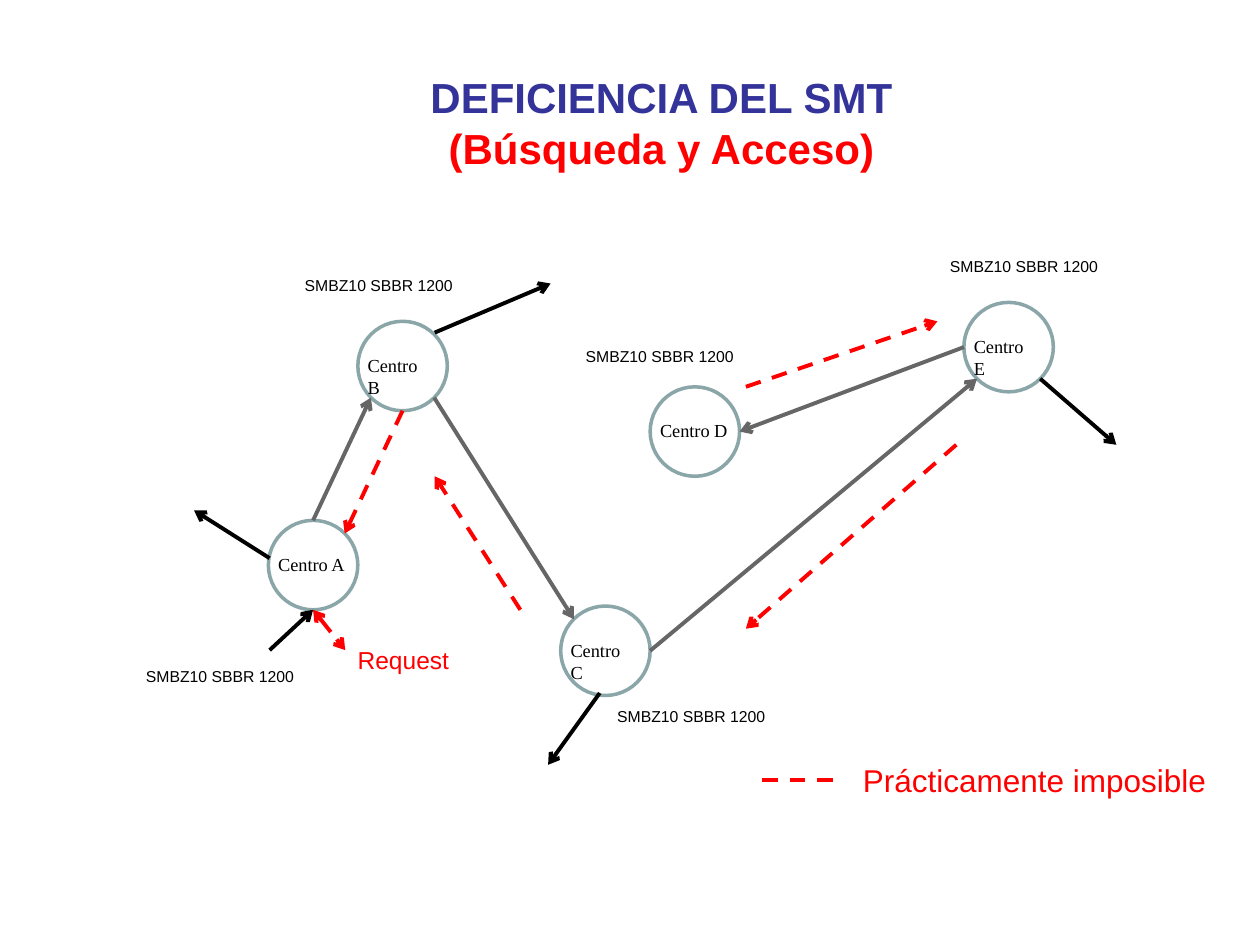
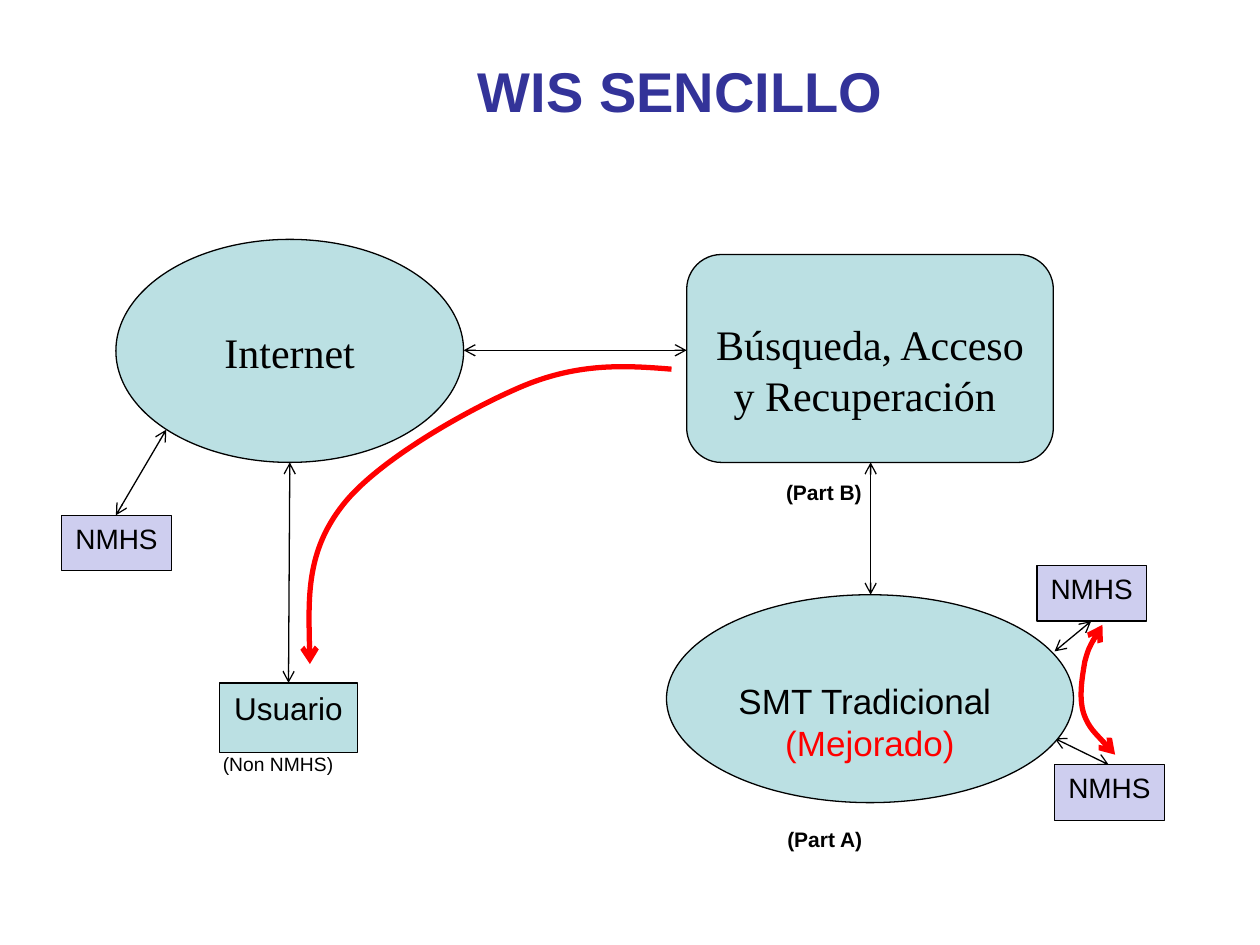
from dataclasses import dataclass
from math import sqrt

from lxml.etree import SubElement
from pptx import Presentation
from pptx.dml.color import RGBColor
from pptx.enum.dml import MSO_LINE
from pptx.enum.shapes import MSO_CONNECTOR, MSO_SHAPE
from pptx.enum.text import MSO_ANCHOR, PP_ALIGN
from pptx.oxml.ns import qn
from pptx.util import Inches, Pt


@dataclass(frozen=True)
class Theme:
    sans: str = "Arial"
    serif: str = "Times New Roman"
    title: str = "333399"
    accent: str = "FF0000"
    ink: str = "000000"
    ring: str = "8AA6A8"
    link: str = "666666"
    system: str = "BBE0E3"
    service: str = "CECEEF"
    title_size: float = 32
    subtitle_size: float = 24
    body_size: float = 20
    legend_size: float = 18
    box_size: float = 16
    request_size: float = 14
    part_size: float = 12
    note_size: float = 11
    centre_size: float = 10.5
    message_size: float = 9
    hairline: float = 0.75
    arrow_line: float = 2.25
    route_line: float = 3


THEME = Theme()

# The slide is a grid of 100 columns by 75 rows
COLUMNS, ROWS = 100, 75
CELL = Inches(10) / COLUMNS

CIRCLE = 7.1
CENTRES = {"A": (21.3, 41.3), "B": (28.4, 25.5), "C": (44.5, 48.1),
           "D": (51.6, 30.7), "E": (76.5, 24)}
WRAPPED_CENTRES = "BCE"
SIDES = {"top": (0, -1), "bottom": (0, 1), "left": (-1, 0), "right": (1, 0)}


def cells(count):
    return round(count * CELL)


def color(value):
    return RGBColor.from_string(value)


def site(name, *sides):
    """Point on the rim of a centre's circle, on one side or between two."""
    left, top = CENTRES[name]
    radius = CIRCLE / 2
    reach = radius / sqrt(len(sides))
    return (left + radius + reach * sum(SIDES[side][0] for side in sides),
            top + radius + reach * sum(SIDES[side][1] for side in sides))


def write(text_frame, lines, size, font, colors, bold=False, aligns=(PP_ALIGN.CENTER,)):
    """Fill a frame; the last colour and alignment serve all further lines."""
    text_frame.text = "\n".join(lines)
    for index, paragraph in enumerate(text_frame.paragraphs):
        paragraph.alignment = aligns[min(index, len(aligns) - 1)]
        for run in paragraph.runs:
            run.font.size = Pt(size)
            run.font.name = font
            run.font.bold = bold
            run.font.color.rgb = color(colors[min(index, len(colors) - 1)])


def add_text(slide, area, lines, size, shade=THEME.ink, font=THEME.sans,
             wrap=False, align=PP_ALIGN.LEFT, bold=False):
    box = slide.shapes.add_textbox(*map(cells, area))
    box.text_frame.word_wrap = wrap
    colors = (shade,) if isinstance(shade, str) else shade
    write(box.text_frame, lines, size, font, colors, bold, (align,))


def add_title(slide, area, lines, size):
    add_text(slide, area, lines, size, (THEME.title, THEME.accent),
             align=PP_ALIGN.CENTER, bold=True)


def add_node(slide, kind, area, fill, line=THEME.ink, width=THEME.hairline):
    node = slide.shapes.add_shape(kind, *map(cells, area))
    node.shadow.inherit = False
    if fill:
        node.fill.solid()
        node.fill.fore_color.rgb = color(fill)
    else:
        node.fill.background()
    node.line.color.rgb = color(line)
    node.line.width = Pt(width)
    return node


def add_labelled_node(slide, kind, area, fill, lines, size, font=THEME.sans,
                      colors=(THEME.ink,), aligns=(PP_ALIGN.CENTER,), drop=0.5):
    node = add_node(slide, kind, area, fill)
    node.text_frame.word_wrap = True
    node.text_frame.vertical_anchor = MSO_ANCHOR.TOP
    node.text_frame.margin_top = cells(drop)
    write(node.text_frame, lines, size, font, colors, aligns=aligns)


def add_arrowheads(shape, ends):
    line = shape.line._get_or_add_ln()
    for end in ends:
        SubElement(line, qn(f"a:{end}End"), type="arrow")


def add_arrow(slide, start, finish, shade=THEME.ink, width=THEME.arrow_line,
              dashed=False, ends=("tail",)):
    connector = slide.shapes.add_connector(
        MSO_CONNECTOR.STRAIGHT, *map(cells, (*start, *finish)))
    connector.line.color.rgb = color(shade)
    connector.line.width = Pt(width)
    if dashed:
        connector.line.dash_style = MSO_LINE.DASH
    add_arrowheads(connector, ends)
    SubElement(connector._element.spPr, qn("a:effectLst"))


def add_route(slide, points, ends):
    """Curved line: a start, then three Bézier points for each stretch."""
    start, *rest = [(cells(x), cells(y)) for x, y in points]
    builder = slide.shapes.build_freeform(*start)
    builder.add_line_segments(rest, close=False)
    route = builder.convert_to_shape()
    outline = route._element.spPr.find(".//" + qn("a:path"))
    steps = outline.findall(qn("a:lnTo"))
    for first in range(0, len(steps), 3):
        curve = SubElement(outline, qn("a:cubicBezTo"))
        for step in steps[first:first + 3]:
            curve.append(step[0])
            outline.remove(step)
    route.shadow.inherit = False
    route.fill.background()
    route.line.color.rgb = color(THEME.accent)
    route.line.width = Pt(THEME.route_line)
    add_arrowheads(route, ends)


def build_deficiency(slide):
    # Centres
    for name, (left, top) in CENTRES.items():
        add_node(slide, MSO_SHAPE.OVAL, (left, top, CIRCLE, CIRCLE), None,
                 THEME.ring, 2)

    # Links between centres
    for start, finish in (
            (site("A", "top"), site("B", "bottom", "left")),
            (site("B", "bottom", "right"), site("C", "top", "left")),
            (site("C", "right"), site("E", "bottom", "left")),
            (site("E", "left"), site("D", "right"))):
        add_arrow(slide, start, finish, THEME.link)

    # Centre names
    for name, (left, top) in CENTRES.items():
        width = 7.1 if name in WRAPPED_CENTRES else 8
        add_text(slide, (left - 0.2, top + 2.1, width, 2.8), [f"Centro {name}"],
                 THEME.centre_size, font=THEME.serif, wrap=True)

    # Traffic in and out
    for start, finish in (
            ((21.4, 51.6), site("A", "bottom")),
            ((34.5, 26.4), (43.7, 22.5)),
            ((47.6, 55), (43.5, 60.7)),
            ((21.4, 44.3), (15.4, 40.5)),
            (site("E", "bottom", "right"), (88.6, 35.3))):
        add_arrow(slide, start, finish)

    # Message headings
    for left, top in ((10.6, 52.4), (48, 55.6), (23.2, 21.4), (45.5, 27), (74.4, 19.9)):
        add_text(slide, (left, top, 13.9, 2.5), ["SMBZ10 SBBR 1200"],
                 THEME.message_size)

    # Return paths that are practically impossible
    for start, finish, ends in (
            ((59.2, 30.7), (74.4, 25.5), ("tail",)),
            ((75.9, 35.3), (59.2, 49.9), ("tail",)),
            ((41.3, 48.4), (34.5, 37.8), ("tail",)),
            (site("B", "bottom"), site("A", "top", "right"), ("tail",)),
            (site("A", "bottom"), (27.4, 51.6), ("head", "tail")),
            ((60.5, 61.9), (66.7, 61.9), ())):
        add_arrow(slide, start, finish, THEME.accent, dashed=True, ends=ends)
    add_text(slide, (27.4, 50.7, 9.3, 3.4), ["Request"], THEME.request_size,
             THEME.accent)
    add_text(slide, (67.5, 59.9, 30.2, 4), ["Prácticamente imposible"],
             THEME.legend_size, THEME.accent)

    add_title(slide, (33, 5.2, 39, 9.1),
              ["DEFICIENCIA DEL SMT", "(Búsqueda y Acceso)"], THEME.subtitle_size)


def build_simple_wis(slide):
    add_title(slide, (36.8, 4, 34.4, 6.4), ["WIS SENCILLO"], THEME.title_size)

    # Two-way links
    for start, finish in (
            ((88, 60.7), (83.7, 58.6)), ((36.8, 27.8), (54.5, 27.8)),
            ((23, 36.7), (22.9, 54.2)), ((69.1, 36.7), (69.1, 47.2)),
            ((86.6, 49.3), (83.7, 51.7)), ((9.2, 40.9), (13.2, 34.1))):
        add_arrow(slide, start, finish, width=THEME.hairline, ends=("head", "tail"))

    # Systems
    lowered = 4.3
    add_labelled_node(slide, MSO_SHAPE.OVAL, (52.9, 47.2, 32.3, 16.5), THEME.system,
                      ["SMT Tradicional", "(Mejorado)"], THEME.body_size,
                      colors=(THEME.ink, THEME.accent),
                      aligns=(PP_ALIGN.LEFT, PP_ALIGN.CENTER), drop=lowered)
    add_labelled_node(slide, MSO_SHAPE.OVAL, (9.2, 19, 27.6, 17.7), THEME.system,
                      ["Internet"], THEME.subtitle_size, THEME.serif, drop=lowered)
    add_labelled_node(slide, MSO_SHAPE.ROUNDED_RECTANGLE, (54.5, 20.2, 29.1, 16.5),
                      THEME.system, ["Búsqueda, Acceso y Recuperación "],
                      THEME.subtitle_size, THEME.serif, drop=lowered)

    # Users and services
    add_labelled_node(slide, MSO_SHAPE.RECTANGLE, (17.4, 54.2, 11, 5.5),
                      THEME.system, ["Usuario"], THEME.legend_size)
    for left, top in ((82.3, 44.9), (83.7, 60.7), (4.9, 40.9)):
        add_labelled_node(slide, MSO_SHAPE.RECTANGLE, (left, top, 8.7, 4.4),
                          THEME.service, ["NMHS"], THEME.box_size)

    # Delivery routes
    add_route(slide, [(24.6, 52.7), (24.5, 48.3), (24.3, 43.8), (27.2, 40.1),
                      (30, 36.5), (37.3, 32.4), (41.6, 30.6),
                      (46, 28.8), (49.6, 29), (53.3, 29.3)], ("head",))
    add_route(slide, [(87.5, 49.6), (86.9, 50.5), (86.4, 51.4), (86.1, 52.5),
                      (85.9, 53.7), (85.6, 55.3), (86, 56.6),
                      (86.4, 57.8), (88.5, 59.9), (88.5, 59.9)], ("head", "tail"))

    # Captions
    add_text(slide, (16.7, 59.2, 10.9, 2.9), ["(Non NMHS)"], THEME.note_size)
    for caption, left, top in (("(Part A)", 61.5, 65.1), ("(Part B)", 61.4, 37.6)):
        add_text(slide, (left, top, 8, 3), [caption], THEME.part_size, bold=True)


def main():
    presentation = Presentation()
    presentation.slide_width = cells(COLUMNS)
    presentation.slide_height = cells(ROWS)
    blank = presentation.slide_layouts[6]
    for build in (build_deficiency, build_simple_wis):
        build(presentation.slides.add_slide(blank))
    presentation.save("out.pptx")


if __name__ == "__main__":
    main()
